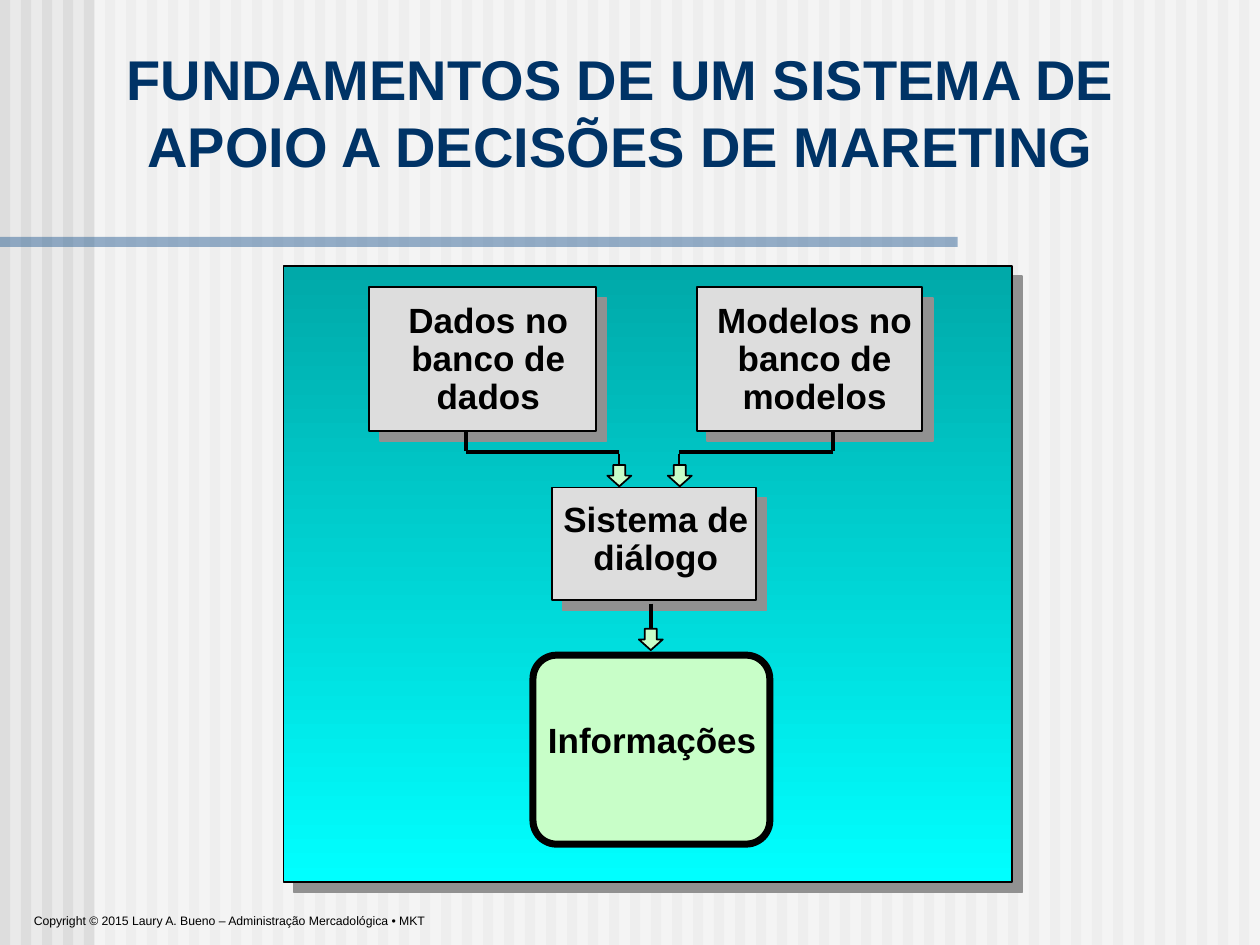
from lxml import etree
from pptx import Presentation
from pptx.dml.color import RGBColor
from pptx.enum.shapes import MSO_CONNECTOR, MSO_SHAPE
from pptx.enum.text import MSO_ANCHOR, MSO_AUTO_SIZE, PP_ALIGN
from pptx.oxml.ns import qn
from pptx.util import Inches, Pt

RECT = MSO_SHAPE.RECTANGLE
ROUND = MSO_SHAPE.ROUNDED_RECTANGLE
DOWN = MSO_SHAPE.DOWN_ARROW
LINE = MSO_CONNECTOR.STRAIGHT
LEFT, MID = PP_ALIGN.LEFT, PP_ALIGN.CENTER
COLORS = {
    "back": "EAEAEA", "stripe": "DDDDDD", "veil": "FFFFFF", "rule": "336699",
    "title": "003366", "ink": "000000", "box": "DDDDDD", "mint": "C8FEC8",
    "shade": "919191", "teal": "00A9A9", "cyan": "00FFFF",
}


def color(name):
    """Return the named colour."""
    return RGBColor.from_string(COLORS[name])


def add_box(slide, at, fill, width=0, kind=RECT, alpha=None):
    """Add a filled shape, outlined when width is given."""
    box = slide.shapes.add_shape(kind, *map(Inches, at))
    box.shadow.inherit = False
    box.fill.solid()
    box.fill.fore_color.rgb = color(fill)
    if alpha:
        tint = box._element.spPr.find(".//" + qn("a:srgbClr"))
        etree.SubElement(tint, qn("a:alpha"), val=str(alpha * 1000))
    if width:
        box.line.color.rgb = color("ink")
        box.line.width = Pt(width)
    else:
        box.line.fill.background()
    return box


def add_shade(box):
    """Give a shape a hard shadow to the lower right."""
    list_ = box._element.spPr.find(qn("a:effectLst"))
    cast = etree.SubElement(list_, qn("a:outerShdw"), blurRad="0", dist=str(Pt(8.5)),
                            dir="2700000", algn="ctr", rotWithShape="0")
    etree.SubElement(cast, qn("a:srgbClr"), val=COLORS["shade"])


def add_text(slide, at, text, size=20, bold=True, align=MID, space=0.9, wrap=True):
    """Add a text box with one paragraph."""
    frame = slide.shapes.add_textbox(*map(Inches, at)).text_frame
    frame.word_wrap = wrap
    para = frame.paragraphs[0]
    para.text = text
    para.alignment = align
    para.line_spacing = space
    set_font(para.font, size, bold, "ink")


def set_font(font, size, bold, name):
    """Set the look of a font."""
    font.name = "Arial"
    font.size = Pt(size)
    font.bold = bold
    font.color.rgb = color(name)


def add_line(slide, ends, width=2.25):
    """Add a straight black line."""
    line = slide.shapes.add_connector(LINE, *map(Inches, ends))
    line.line.color.rgb = color("ink")
    line.line.width = Pt(width)
    etree.SubElement(line._element.spPr, qn("a:effectLst"))


def add_arrow(slide, x, y):
    """Add a small down arrow centred on x."""
    add_box(slide, (x - 0.09, y, 0.19, 0.17), "mint", 1, DOWN)


def add_back(slide):
    """Add the stripes, the veil and the rule."""
    slide.background.fill.solid()
    slide.background.fill.fore_color.rgb = color("back")
    for i in range(60):
        add_box(slide, (i / 6, 0, 0.08, 7.5), "stripe")
    add_box(slide, (0.75, 0, 9.25, 7.5), "veil", alpha=50)
    add_box(slide, (0, 1.88, 7.6, 0.08), "rule", alpha=50)


def add_title(slide, text):
    """Place the title above the background."""
    title = slide.shapes.title
    title.left, title.top, title.width, title.height = map(Inches, (0.67, 0.27, 8.51, 1.23))
    frame = title.text_frame
    frame.text = text
    frame.word_wrap = True
    frame.auto_size = MSO_AUTO_SIZE.NONE
    frame.vertical_anchor = MSO_ANCHOR.MIDDLE
    para = frame.paragraphs[0]
    para.alignment = MID
    set_font(para.font, 32, True, "title")
    slide.shapes._spTree.append(title._element)


def add_panel(slide):
    """Add the large gradient panel."""
    panel = add_box(slide, (2.25, 2.11, 5.78, 4.89), "cyan", 1)
    panel.fill.gradient()
    panel.fill.gradient_angle = 270
    for stop, name, place in zip(panel.fill.gradient_stops, ("teal", "cyan"), (0, 1)):
        stop.color.rgb = color(name)
        stop.position = place
    add_shade(panel)


def add_flow(slide):
    """Add the boxes, their labels and the arrows."""
    info = add_box(slide, (4.23, 5.2, 1.88, 1.5), "mint", 4, ROUND)
    info.adjustments[0] = 0.125
    nodes = [
        ((2.93, 2.28, 1.8, 1.14), (3, 2.36, 1.75, 1), "Dados no banco de dados"),
        ((5.53, 2.28, 1.79, 1.14), (5.59, 2.36, 1.75, 1), "Modelos no banco de modelos"),
        ((4.38, 3.87, 1.62, 0.89), (4.33, 3.94, 1.75, 0.7), "Sistema de diálogo"),
    ]
    for at, spot, text in nodes:
        add_shade(add_box(slide, at, "box", 1))
        add_text(slide, spot, text)
    add_text(slide, (4.25, 5.69, 1.92, 0.4), "Informações", align=LEFT)
    for start, end in ((3.7, 4.91), (6.61, 5.39)):
        add_line(slide, (start, 3.43, start, 3.58))
        add_line(slide, (start, 3.59, end, 3.59))
        add_line(slide, (end, 3.6, end, 3.85), 1)
        add_arrow(slide, end, 3.69)
    add_line(slide, (5.17, 4.79, 5.17, 5.08))
    add_arrow(slide, 5.16, 4.99)


def main():
    """Build and save the slide."""
    deck = Presentation()
    deck.slide_width, deck.slide_height = Inches(10), Inches(7.5)
    slide = deck.slides.add_slide(deck.slide_layouts[5])
    add_back(slide)
    add_title(slide, "FUNDAMENTOS DE UM SISTEMA DE APOIO A DECISÕES DE MARETING")
    add_panel(slide)
    add_flow(slide)
    add_text(slide, (0.17, 7.2, 3.36, 0.22),
             "Copyright © 2015 Laury A. Bueno – Administração Mercadológica • MKT",
             7, False, LEFT, 1, False)
    deck.save("out.pptx")


if __name__ == "__main__":
    main()
